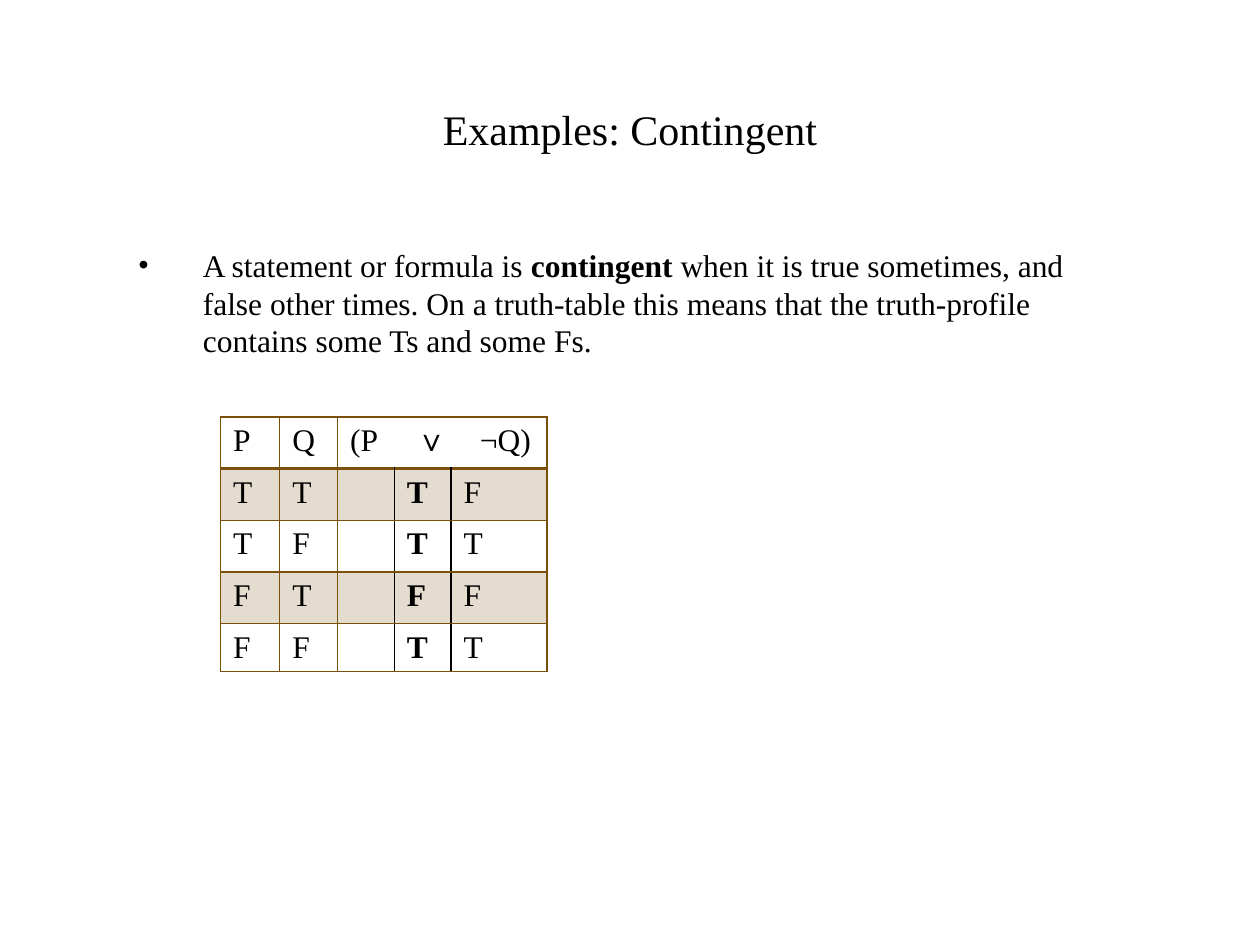
import pptx
import pptx.dml.color
import pptx.enum.text
import pptx.oxml
import pptx.oxml.ns
import pptx.util

TITLE = "Examples: Contingent"
DEFINITION = [
    ("A statement or formula is ", False),
    ("contingent", True),
    (" when it is true sometimes, and false other times. On a truth-table this means "
     "that the truth-profile contains some Ts and some Fs.", False),
]
HEADER = [[("P", False)], [("Q", False)],
          [("(P\t", False), ("∨\t", True), ("¬Q)", False)]]
TRUTH_ROWS = ["TT TF", "TF TT", "FT FF", "FF TT"]
MAIN_COLUMN = 3  # column of the main connective, where the truth-profile is read
COLUMN_WIDTHS = [0.47, 0.46, 0.45, 0.45, 0.76]
ROW_HEIGHTS = [0.41, 0.41, 0.41, 0.41, 0.38]
HEADER_TABS = [0.52, 1.03]

FONT = "Times New Roman"
BLACK, BROWN, BAND = "000000", "7A500A", "E4DCCE"
inches = pptx.util.Inches


def color(value):
    return pptx.dml.color.RGBColor.from_string(value)


def place(shape, left, top, width, height):
    shape.left, shape.top = inches(left), inches(top)
    shape.width, shape.height = inches(width), inches(height)


def write(paragraph, spans, size):
    for text, bold in spans:
        span = paragraph.add_run()
        span.text = text
        span.font.bold = bold
    paragraph.font.name = FONT
    paragraph.font.size = pptx.util.Pt(size)
    paragraph.font.color.rgb = color(BLACK)


def add_xml(parent, xml):
    parent.append(pptx.oxml.parse_xml(
        xml.replace(">", f" {pptx.oxml.ns.nsdecls('a')}>", 1)))


def add_borders(cell, **sides):
    """Draw the sides L, R, T and B, each given as (colour, points)."""
    for side in "LRTB":
        value, points = sides[side]
        add_xml(cell._tc.get_or_add_tcPr(),
                f'<a:ln{side} w="{pptx.util.Pt(points)}"><a:solidFill>'
                f'<a:srgbClr val="{value}"/></a:solidFill></a:ln{side}>')


def add_title(slide):
    title = slide.shapes.title
    place(title, 1, 0.55, 8, 0.95)
    title.text_frame.vertical_anchor = pptx.enum.text.MSO_ANCHOR.MIDDLE
    paragraph = title.text_frame.paragraphs[0]
    paragraph.alignment = pptx.enum.text.PP_ALIGN.CENTER
    write(paragraph, [(TITLE, False)], 24)


def add_definition(slide):
    body = slide.placeholders[1]
    place(body, 1, 1.9, 8, 4.44)
    paragraph = body.text_frame.paragraphs[0]
    paragraph.space_before = pptx.util.Pt(0)
    properties = paragraph._p.get_or_add_pPr()
    properties.set("marL", str(inches(0.51)))
    properties.set("indent", str(-inches(0.51)))
    add_xml(properties, '<a:buSzPct val="90000"></a:buSzPct>')
    add_xml(properties, '<a:buChar char="•"></a:buChar>')
    write(paragraph, DEFINITION, 18)


def add_truth_table(slide):
    frame = slide.shapes.add_table(
        len(ROW_HEIGHTS), len(COLUMN_WIDTHS), inches(1.75), inches(3.31),
        inches(sum(COLUMN_WIDTHS)), inches(sum(ROW_HEIGHTS)))
    table = frame.table
    table.first_row = table.horz_banding = False
    for column, width in zip(table.columns, COLUMN_WIDTHS):
        column.width = inches(width)
    for row, height in zip(table.rows, ROW_HEIGHTS):
        row.height = inches(height)

    table.cell(0, 2).merge(table.cell(0, 4))
    tabs = "".join(f'<a:tab pos="{inches(stop)}" algn="l"/>' for stop in HEADER_TABS)
    add_xml(table.cell(0, 2).text_frame.paragraphs[0]._p.get_or_add_pPr(),
            f"<a:tabLst>{tabs}</a:tabLst>")

    content = [HEADER] + [
        [[(value.strip(), column == MAIN_COLUMN)] for column, value in enumerate(values)]
        for values in TRUTH_ROWS]
    thin, thick, inner = (BROWN, 1), (BROWN, 2), (BLACK, 1)
    for row, cells in enumerate(content):
        for column, spans in enumerate(cells):
            cell = table.cell(row, column)
            write(cell.text_frame.paragraphs[0], spans, 18)
            add_borders(cell,
                        L=inner if column >= MAIN_COLUMN else thin,
                        R=inner if row and column in (2, MAIN_COLUMN) else thin,
                        T=thick if row == 1 else thin,
                        B=thick if row == 0 else thin)
            if row % 2:
                cell.fill.solid()
                cell.fill.fore_color.rgb = color(BAND)
            else:
                cell.fill.background()


def main():
    deck = pptx.Presentation()
    deck.slide_width, deck.slide_height = inches(10), inches(7.5)
    slide = deck.slides.add_slide(deck.slide_layouts[1])
    add_title(slide)
    add_definition(slide)
    add_truth_table(slide)
    deck.save("out.pptx")


if __name__ == "__main__":
    main()
